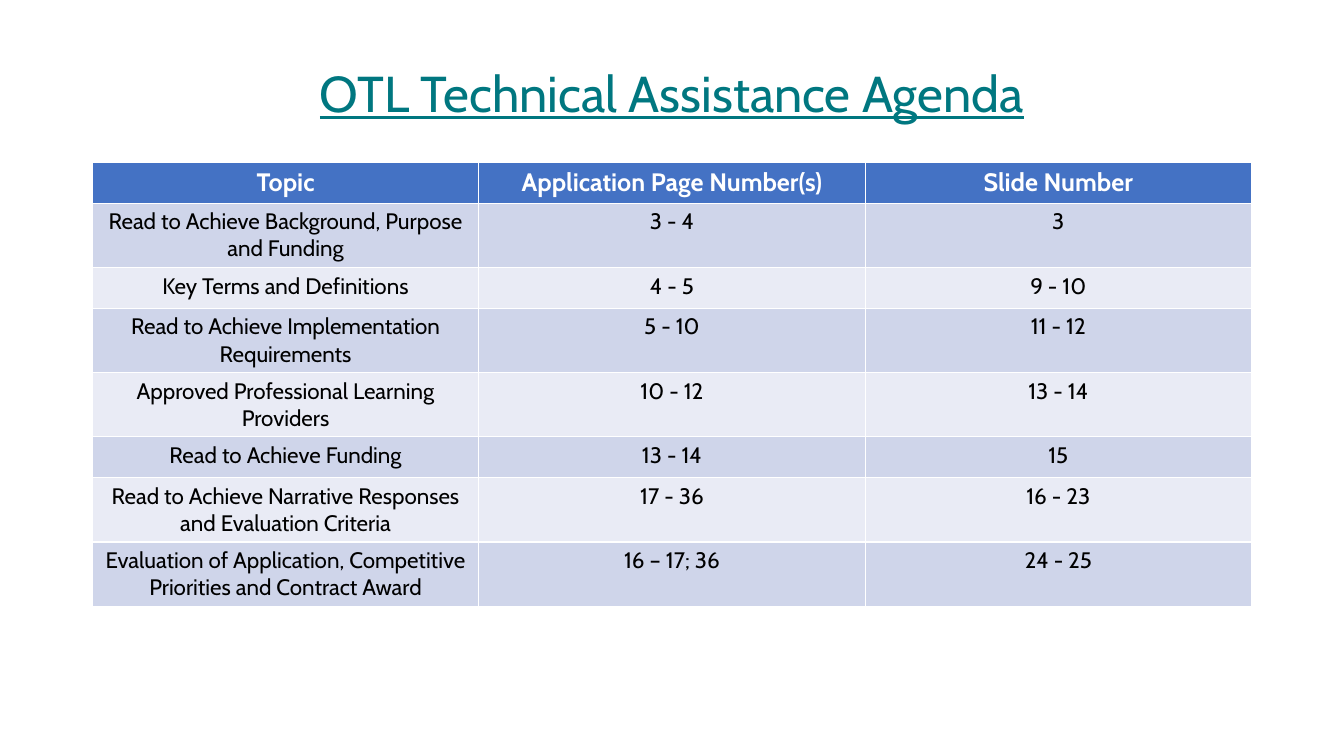
"""Build the OTL technical assistance agenda slide."""
from pptx import Presentation
from pptx.dml.color import RGBColor
from pptx.enum.text import MSO_ANCHOR as Anchor, PP_ALIGN as Align
from pptx.util import Pt


def style_text(paragraph, size, color, bold=False):
    paragraph.alignment = Align.CENTER
    paragraph.font.name = "Cabin"
    paragraph.font.size = Pt(size)
    paragraph.font.bold = bold
    paragraph.font.color.rgb = RGBColor.from_string(color)


AGENDA = [
    ("Topic", "Application Page Number(s)", "Slide Number"),
    ("Read to Achieve Background, Purpose and Funding", "3 - 4", "3"),
    ("Key Terms and Definitions", "4 - 5", "9 - 10"),
    ("Read to Achieve Implementation Requirements", "5 - 10", "11 - 12"),
    ("Approved Professional Learning Providers", "10 - 12", "13 - 14"),
    ("Read to Achieve Funding", "13 - 14", "15"),
    ("Read to Achieve Narrative Responses and Evaluation Criteria", "17 - 36", "16 - 23"),
    ("Evaluation of Application, Competitive Priorities and Contract Award",
     "16 – 17; 36", "24 - 25"),
]
LEFT, WIDTH, ROW_HEIGHT = 66, 828, 29.2

prs = Presentation()
prs.slide_width, prs.slide_height = Pt(960), Pt(540)
slide = prs.slides.add_slide(prs.slide_layouts[5])

title = slide.shapes.title
title.left, title.top, title.width, title.height = Pt(LEFT), Pt(28.75), Pt(WIDTH), Pt(80)
title.text_frame.text = "OTL Technical Assistance Agenda"
title.text_frame.vertical_anchor = Anchor.MIDDLE
heading = title.text_frame.paragraphs[0]
heading.line_spacing = 0.9
style_text(heading, 36, "007780")
heading.font.underline = True

agenda = slide.shapes.add_table(len(AGENDA), len(AGENDA[0]), Pt(LEFT), Pt(116),
                                Pt(WIDTH), Pt(ROW_HEIGHT * len(AGENDA))).table
for row, entries in enumerate(AGENDA):
    agenda.rows[row].height = Pt(ROW_HEIGHT)
    is_header = row == 0
    band = "4472C4" if is_header else "CFD5EA" if row % 2 else "E9EBF5"
    for column, entry in enumerate(entries):
        cell = agenda.cell(row, column)
        cell.text = entry
        cell.fill.solid()
        cell.fill.fore_color.rgb = RGBColor.from_string(band)
        style_text(cell.text_frame.paragraphs[0], 18 if is_header else 16,
                   "FFFFFF" if is_header else "000000", is_header)

prs.save("out.pptx")
